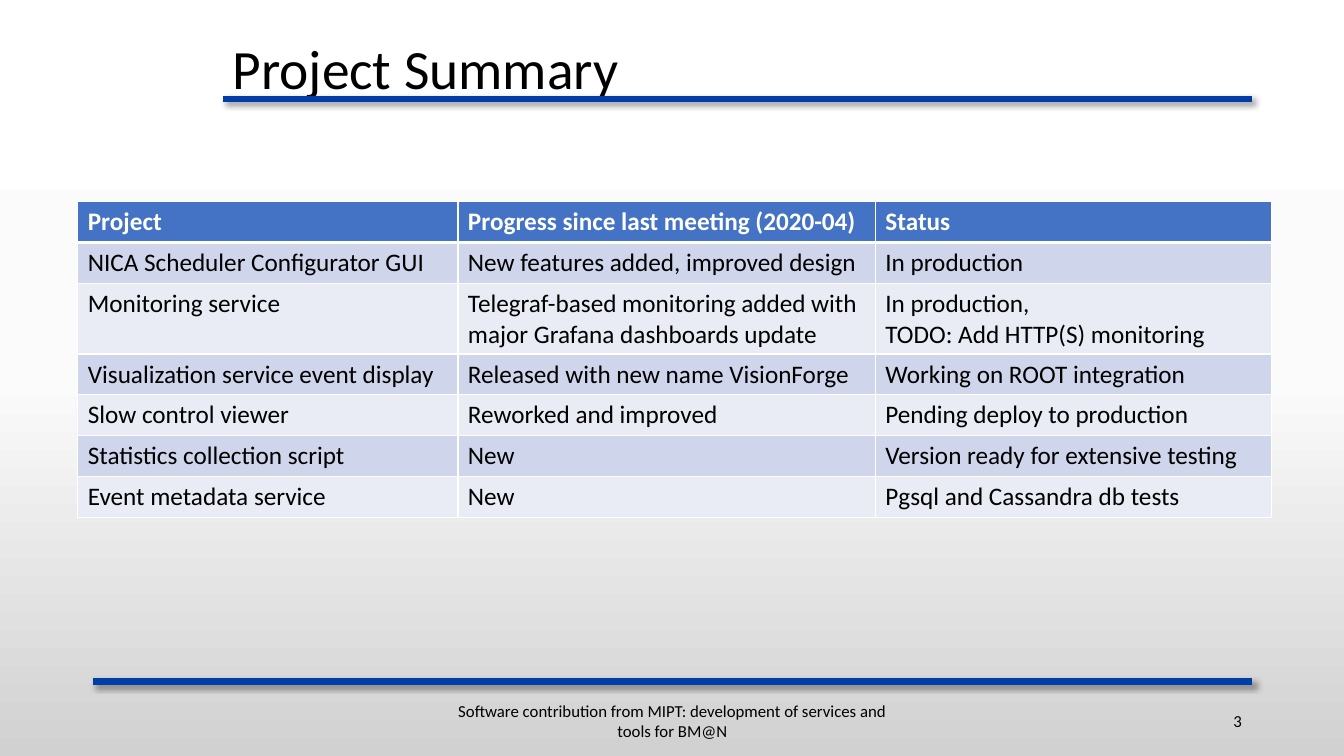
import lxml.etree
import pptx
import pptx.dml.color
import pptx.enum.shapes
import pptx.enum.text
import pptx.oxml.ns
import pptx.util

Cm = pptx.util.Cm
Pt = pptx.util.Pt
qn = pptx.oxml.ns.qn
ALIGN = pptx.enum.text.PP_ALIGN
MIDDLE = pptx.enum.text.MSO_ANCHOR.MIDDLE

FONT = "Calibri"
COLORS = {
    "text": "000000",
    "rule": "003DA6",
    "shadow": "000000",
    "header": "4472C4",
    "header_text": "FFFFFF",
    "band_dark": "CFD5EA",
    "band_light": "E9EBF5",
    "border": "FFFFFF",
}
BACKGROUND_STOPS = [(0, "FFFFFF"), (50, "FBFBFB"), (100, "D1D1D1")]
PROJECTS = [
    ("Project", "Progress since last meeting (2020-04)", "Status"),
    ("NICA Scheduler Configurator GUI", "New features added, improved design", "In production"),
    ("Monitoring service",
     "Telegraf-based monitoring added with major Grafana dashboards update",
     "In production,\nTODO: Add HTTP(S) monitoring"),
    ("Visualization service event display", "Released with new name VisionForge",
     "Working on ROOT integration"),
    ("Slow control viewer", "Reworked and improved", "Pending deploy to production"),
    ("Statistics collection script", "New", "Version ready for extensive testing"),
    ("Event metadata service", "New", "Pgsql and Cassandra db tests"),
]
COLUMN_WIDTHS = [9.58, 10.52, 9.98]
ROW_HEIGHT = 1.03
TALL_ROW_HEIGHT = 1.78


def rgb(name):
    """Return the named colour."""
    return pptx.dml.color.RGBColor.from_string(COLORS[name])


def add_child(parent, tag, **attributes):
    """Append a DrawingML element with the given attributes."""
    child = lxml.etree.SubElement(parent, qn(tag))
    for key, value in attributes.items():
        child.set(key, str(value))
    return child


def format_text(tf, size, color, bold=False, align=ALIGN.LEFT):
    """Format every paragraph and run of a text frame."""
    for p in tf.paragraphs:
        p.alignment = align
        for r in p.runs:
            r.font.name = FONT
            r.font.size = Pt(size)
            r.font.bold = bold
            r.font.color.rgb = rgb(color)


def add_background(s):
    """Fill the slide with a gradient running from top to bottom."""
    fill = s.background.fill
    fill.gradient()
    fill.gradient_angle = 270
    stops = next(s.element.iter(qn("a:gsLst")))
    for stop in list(stops):
        stops.remove(stop)
    for position, color in BACKGROUND_STOPS:
        stop = add_child(stops, "a:gs", pos=position * 1000)
        add_child(stop, "a:srgbClr", val=color)


def add_rule(s, left, top, width):
    """Draw a thick horizontal rule with a soft shadow."""
    line = s.shapes.add_connector(
        pptx.enum.shapes.MSO_CONNECTOR.STRAIGHT,
        Cm(left), Cm(top), Cm(left + width), Cm(top))
    line.line.color.rgb = rgb("rule")
    line.line.width = Pt(4.5)
    effects = add_child(line.element.spPr, "a:effectLst")
    shadow = add_child(effects, "a:outerShdw", blurRad=Pt(4), dist=Pt(3),
                       dir=45 * 60000, algn="tl", rotWithShape=0)
    color = add_child(shadow, "a:srgbClr", val=COLORS["shadow"])
    add_child(color, "a:alpha", val=40000)


def add_text(s, left, top, width, height, text, size, align=ALIGN.LEFT):
    """Add a wrapped, vertically centred text box."""
    sp = s.shapes.add_textbox(Cm(left), Cm(top), Cm(width), Cm(height))
    tf = sp.text_frame
    tf.word_wrap = True
    tf.vertical_anchor = MIDDLE
    tf.text = text
    format_text(tf, size, "text", align=align)
    return tf


def add_title(s, left, top, width, height):
    """Place the title and the rule under it."""
    tf = add_text(s, left, top, width, height, "Project Summary", 39.6)
    tf.paragraphs[0].line_spacing = 0.9
    add_rule(s, left, top + height - 0.2, width)


def set_borders(cell, top, bottom):
    """Give a cell white borders, with the top and bottom widths in points."""
    tc_pr = cell._tc.get_or_add_tcPr()
    widths = {"a:lnL": 1, "a:lnR": 1, "a:lnT": top, "a:lnB": bottom}
    for tag, width in widths.items():
        ln = add_child(tc_pr, tag, w=Pt(width))
        fill = add_child(ln, "a:solidFill")
        add_child(fill, "a:srgbClr", val=COLORS["border"])


def add_project_table(s, left, top):
    """Place the banded table of projects."""
    heights = [TALL_ROW_HEIGHT if "\n" in row[-1] else ROW_HEIGHT for row in PROJECTS]
    table = s.shapes.add_table(
        len(PROJECTS), len(COLUMN_WIDTHS), Cm(left), Cm(top),
        Cm(sum(COLUMN_WIDTHS)), Cm(sum(heights))).table
    for column, width in zip(table.columns, COLUMN_WIDTHS):
        column.width = Cm(width)
    for i, row in enumerate(PROJECTS):
        table.rows[i].height = Cm(heights[i])
        header = i == 0
        band = "header" if header else "band_dark" if i % 2 else "band_light"
        for j, text in enumerate(row):
            cell = table.cell(i, j)
            set_borders(cell, 3 if i == 1 else 1, 3 if header else 1)
            cell.fill.solid()
            cell.fill.fore_color.rgb = rgb(band)
            cell.text_frame.text = text
            format_text(cell.text_frame, 18, "header_text" if header else "text", header)


def add_footer(s, left, top, width):
    """Place the lower rule, the talk name and the slide number."""
    add_rule(s, left, top, width)
    add_text(s, left + 8.89, top + 0.48, 11.43, 1.02,
             "Software contribution from MIPT: development of services and tools for BM@N",
             12, ALIGN.CENTER)
    add_text(s, left + width - 7.62, top + 0.48, 7.62, 1.02, "3", 12, ALIGN.RIGHT)


def main():
    """Build and save the project summary slide."""
    prs = pptx.Presentation()
    prs.slide_width = Cm(33.87)
    prs.slide_height = Cm(19.05)
    s = prs.slides.add_slide(prs.slide_layouts[6])
    add_background(s)
    add_title(s, 5.61, 0.91, 25.93, 1.78)
    add_project_table(s, 1.96, 5.08)
    add_footer(s, 2.34, 17.17, 29.21)
    prs.save("out.pptx")


if __name__ == "__main__":
    main()
